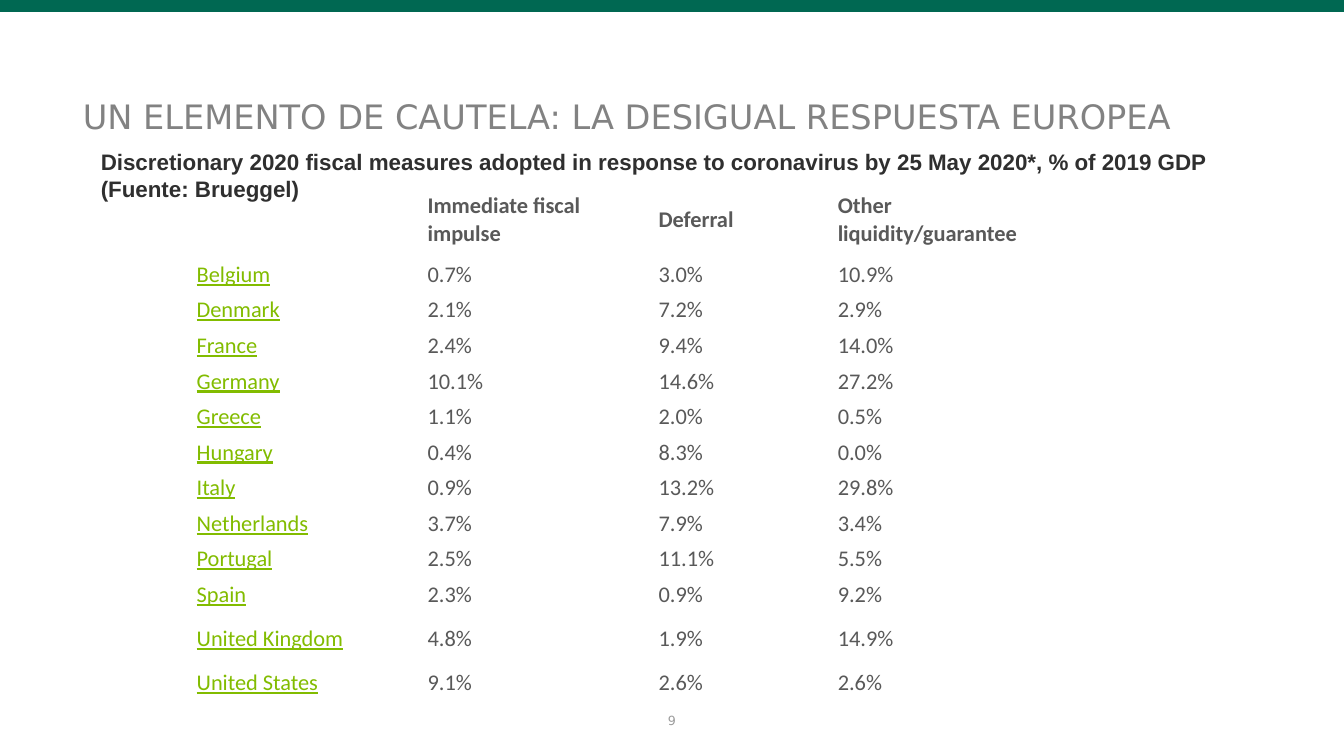
from pptx import Presentation
from pptx.dml.color import RGBColor
from pptx.enum.shapes import MSO_SHAPE
from pptx.enum.text import MSO_ANCHOR, PP_ALIGN
from pptx.util import Pt

RECT = MSO_SHAPE.RECTANGLE
TOP, MIDDLE = MSO_ANCHOR.TOP, MSO_ANCHOR.MIDDLE
LEFT, CENTER = PP_ALIGN.LEFT, PP_ALIGN.CENTER

GREEN, LIME, GRAY = "006852", "82BC00", "595959"
HEADERS = ["", "Immediate fiscal impulse", "Deferral", "Other liquidity/guarantee"]
MEASURES = [
    ("Belgium", "0.7%", "3.0%", "10.9%"),
    ("Denmark", "2.1%", "7.2%", "2.9%"),
    ("France", "2.4%", "9.4%", "14.0%"),
    ("Germany", "10.1%", "14.6%", "27.2%"),
    ("Greece", "1.1%", "2.0%", "0.5%"),
    ("Hungary", "0.4%", "8.3%", "0.0%"),
    ("Italy", "0.9%", "13.2%", "29.8%"),
    ("Netherlands", "3.7%", "7.9%", "3.4%"),
    ("Portugal", "2.5%", "11.1%", "5.5%"),
    ("Spain", "2.3%", "0.9%", "9.2%"),
    ("United Kingdom", "4.8%", "1.9%", "14.9%"),
    ("United States", "9.1%", "2.6%", "2.6%"),
]


def rgb(value):
    return RGBColor.from_string(value)


def write(tf, text, color, align=LEFT, **font):
    tf.word_wrap = True
    tf.text = text
    for p in tf.paragraphs:
        p.alignment = align
        for r in p.runs:
            r.font.color.rgb = rgb(color)
            for name, value in font.items():
                setattr(r.font, name, value)


prs = Presentation()
prs.slide_width, prs.slide_height = Pt(960), Pt(540)
s = prs.slides.add_slide(prs.slide_layouts[5])

bar = s.shapes.add_shape(RECT, 0, 0, Pt(960), Pt(8.5))
bar.shadow.inherit = False
bar.fill.solid()
bar.fill.fore_color.rgb = rgb(GREEN)
bar.line.fill.background()

title = s.shapes.title
title.left, title.top, title.width, title.height = Pt(52), Pt(65), Pt(862.5), Pt(36)
write(title.text_frame, "UN ELEMENTO DE CAUTELA: LA DESIGUAL RESPUESTA EUROPEA",
      "828282", size=Pt(24), name="DejaVu Sans")
title.text_frame.vertical_anchor = TOP

number = s.shapes.add_textbox(Pt(372), Pt(500.5), Pt(216), Pt(28.75))
write(number.text_frame, "9", "9B9B9B", CENTER, size=Pt(9), name="DejaVu Sans")
number.text_frame.vertical_anchor = MIDDLE

widths = [165, 165, 128, 175]
heights = [53.3] + [25.4] * 10 + [37.4, 25.4]
frame = s.shapes.add_table(len(heights), len(widths), Pt(134), Pt(130.25),
                           Pt(sum(widths)), Pt(sum(heights)))
table = frame.table
table.first_row = table.horz_banding = False
for column, width in zip(table.columns, widths):
    column.width = Pt(width)
for row, height in zip(table.rows, heights):
    row.height = Pt(height)

for i, values in enumerate([HEADERS] + MEASURES):
    for j, value in enumerate(values):
        cell = table.cell(i, j)
        cell.fill.background()
        cell.vertical_anchor = MIDDLE
        cell.margin_left = cell.margin_right = Pt(6.5)
        cell.margin_top = cell.margin_bottom = Pt(2.9)
        country = j == 0
        write(cell.text_frame, value, LIME if country else GRAY,
              size=Pt(16), name="Calibri", bold=i == 0, underline=country)

subtitle = s.shapes.add_textbox(Pt(72), Pt(105.5), Pt(869), Pt(38.8))
tf = subtitle.text_frame
tf.margin_left = tf.margin_right = tf.margin_top = tf.margin_bottom = 0
tf.vertical_anchor = MIDDLE
write(tf, "Discretionary 2020 fiscal measures adopted in response to coronavirus "
      "by 25 May 2020*, % of 2019 GDP\n(Fuente: Brueggel)",
      "2F2F2F", size=Pt(16), name="Arial", bold=True)

prs.save("out.pptx")
